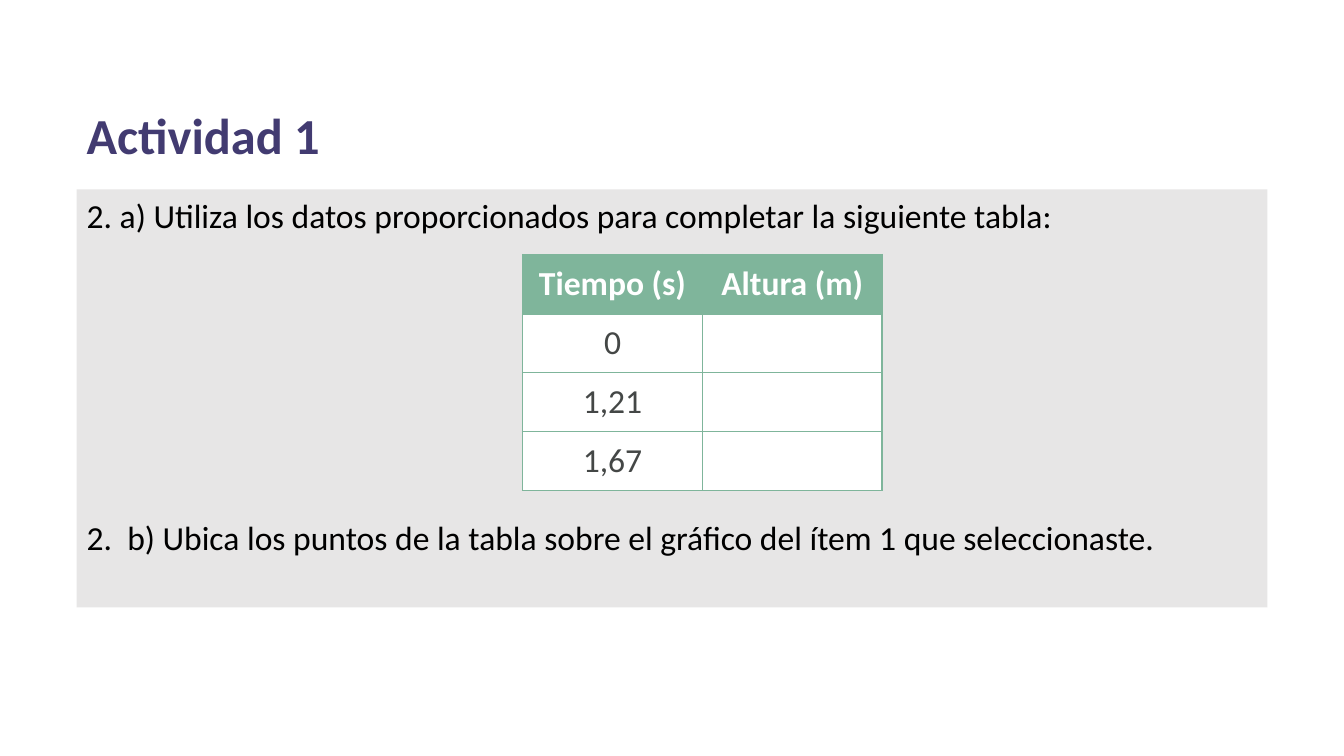
import pptx
import pptx.util
import pptx.oxml
import pptx.dml.color
import pptx.enum.shapes
import pptx.enum.text
from pptx.oxml.ns import qn

Pt = pptx.util.Pt
RGB = pptx.dml.color.RGBColor
ALIGN = pptx.enum.text.PP_ALIGN
ANCHOR = pptx.enum.text.MSO_ANCHOR
PURPLE = RGB(0x42, 0x3B, 0x71)
GRAY = RGB(0xE7, 0xE6, 0xE6)
GREEN = RGB(0x7F, 0xB5, 0x9B)
DARK = RGB(0x44, 0x47, 0x46)
BLACK = RGB(0, 0, 0)
WHITE = RGB(255, 255, 255)
NS = "http://schemas.openxmlformats.org/drawingml/2006/main"


def style(para, size, color, bold, align):
    para.alignment = align
    font = para.font
    font.name, font.size, font.bold = "Calibri", Pt(size), bold
    font.color.rgb = color
    for run in para.runs:
        run.font.name, run.font.size, run.font.bold = "Calibri", Pt(size), bold
        run.font.color.rgb = color


def inset(frame, anchor):
    frame.word_wrap = True
    frame.auto_size = pptx.enum.text.MSO_AUTO_SIZE.NONE
    frame.vertical_anchor = anchor
    frame.margin_left = frame.margin_right = Pt(5.4)
    frame.margin_top = frame.margin_bottom = Pt(2.7)


deck = pptx.Presentation()
deck.slide_width, deck.slide_height = Pt(720), Pt(405)
slide = deck.slides.add_slide(deck.slide_layouts[5])

title = slide.shapes.title
title.left, title.top, title.width, title.height = Pt(41), Pt(53), Pt(482), Pt(38)
title.text_frame.text = "Actividad 1"
inset(title.text_frame, ANCHOR.MIDDLE)
style(title.text_frame.paragraphs[0], 27, PURPLE, True, ALIGN.LEFT)

panel = slide.shapes.add_shape(
    pptx.enum.shapes.MSO_SHAPE.RECTANGLE, Pt(41), Pt(101.5), Pt(638), Pt(224))
panel.shadow.inherit = False
panel.fill.solid()
panel.fill.fore_color.rgb = GRAY
panel.line.fill.background()
frame = panel.text_frame
inset(frame, ANCHOR.TOP)
frame.text = (
    "2. a) Utiliza los datos proporcionados para completar la siguiente tabla:\n"
    "2.  b) Ubica los puntos de la tabla sobre el gráfico del ítem 1 que seleccionaste.")
for para in frame.paragraphs:
    style(para, 18, BLACK, False, ALIGN.LEFT)
frame.paragraphs[1].space_before = Pt(151)

rows = [("Tiempo (s)", "Altura (m)"), ("0", ""), ("1,21", ""), ("1,67", "")]
wide, high = 96.3, 31.6
table = slide.shapes.add_table(
    len(rows), 2, Pt(280), Pt(136.5), Pt(2 * wide), Pt(len(rows) * high)).table
for col in table.columns:
    col.width = Pt(wide)
for r, row in enumerate(rows):
    table.rows[r].height = Pt(high)
    head = r == 0
    for c, text in enumerate(row):
        cell = table.cell(r, c)
        cell.text_frame.text = text
        cell.margin_left = cell.margin_right = Pt(4.8)
        cell.margin_top = cell.margin_bottom = Pt(4.8)
        style(cell.text_frame.paragraphs[0], 18, WHITE if head else DARK, head, ALIGN.CENTER)
        props = cell._tc.get_or_add_tcPr()
        for side in ("lnL", "lnR", "lnT", "lnB"):
            props.append(pptx.oxml.parse_xml(
                f'<a:{side} xmlns:a="{NS}" w="{Pt(1)}"><a:solidFill>'
                f'<a:srgbClr val="{GREEN}"/></a:solidFill></a:{side}>'))
        cell.fill.solid()
        cell.fill.fore_color.rgb = GREEN if head else WHITE
        props.append(props.find(qn("a:solidFill")))

deck.save("out.pptx")
